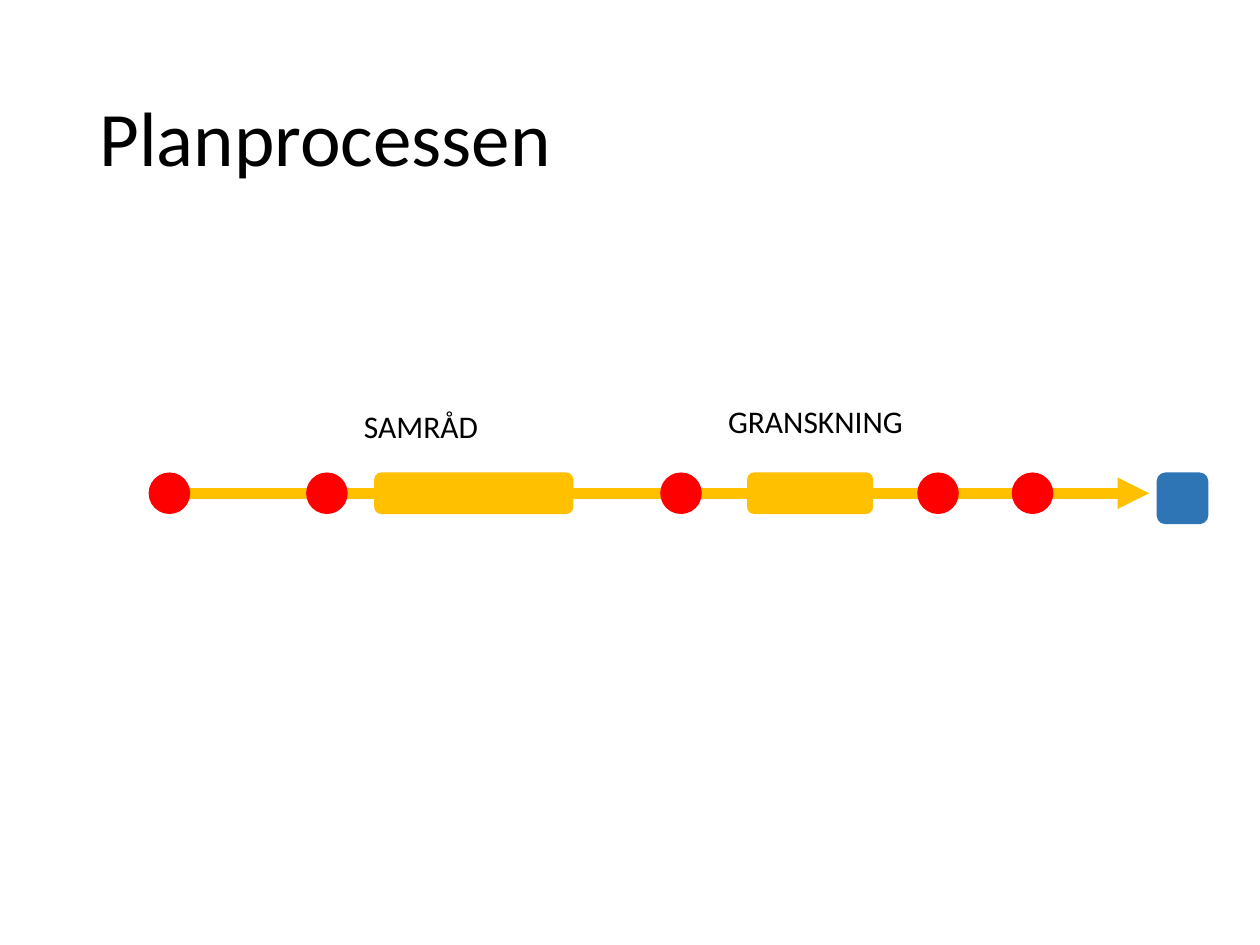
from lxml import etree
from pptx import Presentation
from pptx.dml.color import RGBColor
from pptx.enum.shapes import MSO_CONNECTOR, MSO_SHAPE
from pptx.enum.text import MSO_ANCHOR, PP_ALIGN
from pptx.oxml.ns import qn
from pptx.util import Inches, Pt

STRAIGHT = MSO_CONNECTOR.STRAIGHT
OVAL, ROUNDED = MSO_SHAPE.OVAL, MSO_SHAPE.ROUNDED_RECTANGLE
MIDDLE, TOP = MSO_ANCHOR.MIDDLE, MSO_ANCHOR.TOP
LEFT = PP_ALIGN.LEFT

BLACK = RGBColor(0x00, 0x00, 0x00)
RED = RGBColor(0xFF, 0x00, 0x00)
AMBER = RGBColor(0xFF, 0xC0, 0x00)
BLUE = RGBColor(0x2E, 0x75, 0xB6)
FONT = "Calibri"

# Horizontal positions are inches from the left edge of the timeline.
MILESTONES = [0, 1.25, 4.06, 6.1, 6.85]
PHASES = [(1.79, 1.58), (4.75, 1)]
GOAL_LEFT, GOAL_SIZE = 8, 0.41


def set_text(frame, text, size, anchor=TOP, line_spacing=1.0):
    frame.word_wrap = True
    frame.vertical_anchor = anchor
    paragraph = frame.paragraphs[0]
    paragraph.alignment = LEFT
    paragraph.line_spacing = line_spacing
    run = paragraph.add_run()
    run.text = text
    run.font.name = FONT
    run.font.size = Pt(size)
    run.font.color.rgb = BLACK


def add_title(slide, text, left, top, width, height):
    title = slide.shapes.title
    title.left, title.top = Inches(left), Inches(top)
    title.width, title.height = Inches(width), Inches(height)
    set_text(title.text_frame, text, size=44, anchor=MIDDLE, line_spacing=0.9)


def add_label(slide, text, left, top, width, height):
    label = slide.shapes.add_textbox(
        Inches(left), Inches(top), Inches(width), Inches(height))
    set_text(label.text_frame, text, size=18)


def add_marker(group, kind, color, left, top, width, height):
    marker = group.shapes.add_shape(
        kind, Inches(left), Inches(top), Inches(width), Inches(height))
    marker.shadow.inherit = False
    marker.fill.solid()
    marker.fill.fore_color.rgb = color
    marker.line.fill.background()


def add_arrow(group, start, end, y):
    arrow = group.shapes.add_connector(
        STRAIGHT, Inches(start), Inches(y), Inches(end), Inches(y))
    arrow.line.color.rgb = AMBER
    arrow.line.width = Pt(6)
    line = arrow.line._get_or_add_ln()
    etree.SubElement(line, qn("a:tailEnd"), type="triangle")
    etree.SubElement(line.getparent(), qn("a:effectLst"))


def add_timeline(slide, left, top, width, height):
    """Draw the process arrow with its milestones, phases and goal."""
    group = slide.shapes.add_group_shape()
    add_arrow(group, left + height / 2, left + width - GOAL_SIZE - 0.06,
              top + height / 2)
    for offset in MILESTONES:
        add_marker(group, OVAL, RED, left + offset, top, height, height)
    for offset, length in PHASES:
        add_marker(group, ROUNDED, AMBER, left + offset, top, length, height)
    add_marker(group, ROUNDED, BLUE, left + GOAL_LEFT, top,
               GOAL_SIZE, GOAL_SIZE)


def main():
    deck = Presentation()
    deck.slide_width, deck.slide_height = Inches(10), Inches(7.5)
    slide = deck.slides.add_slide(deck.slide_layouts[5])
    add_title(slide, "Planprocessen", 0.69, 0.4, 8.62, 1.45)
    add_label(slide, "SAMRÅD", 2.79, 3.18, 1.58, 0.4)
    add_label(slide, "GRANSKNING", 5.68, 3.14, 1.95, 0.4)
    add_timeline(slide, 1.18, 3.75, 8.41, 0.33)
    deck.save("out.pptx")


if __name__ == "__main__":
    main()
